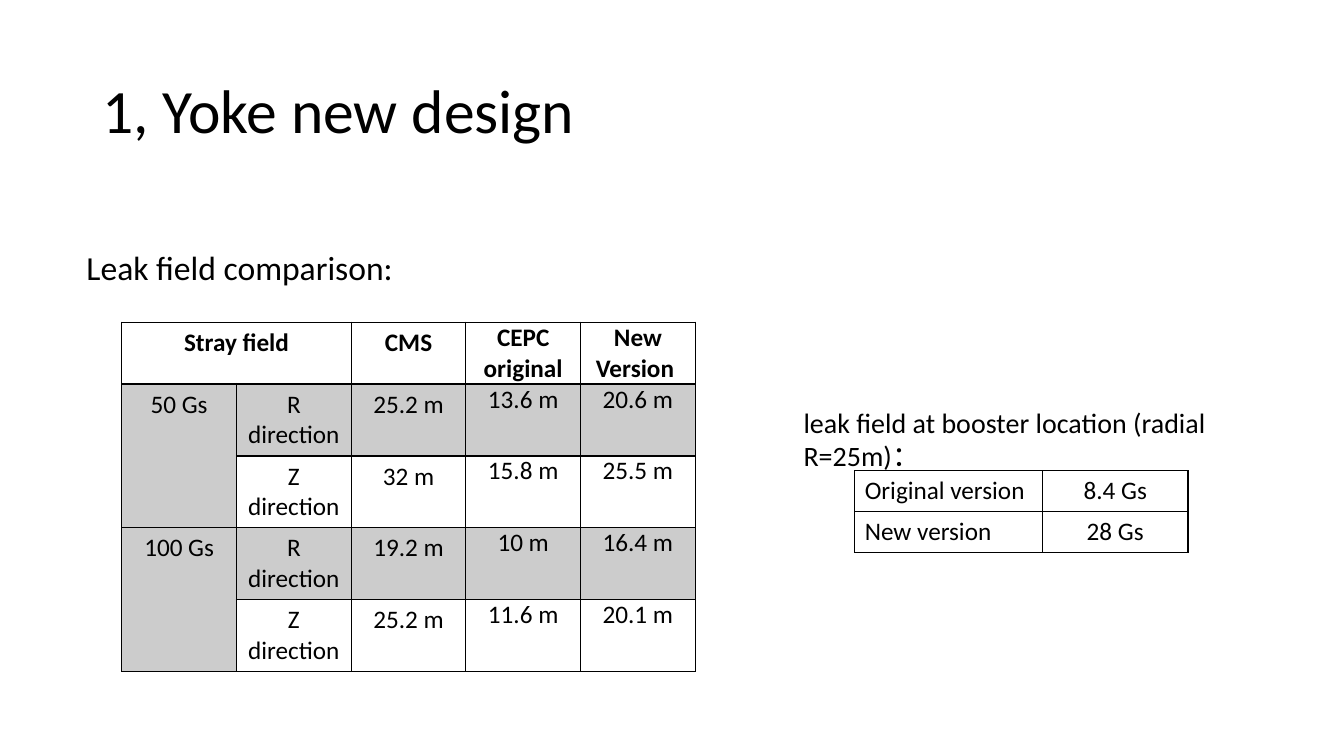
"""Build the yoke design slide with its leak field comparison tables."""
from lxml import etree
from pptx import Presentation
from pptx.dml.color import RGBColor
from pptx.enum.text import MSO_ANCHOR, PP_ALIGN
from pptx.oxml.ns import qn
from pptx.util import Cm, Pt

LEFT, CENTER = PP_ALIGN.LEFT, PP_ALIGN.CENTER
TOP, MIDDLE = MSO_ANCHOR.TOP, MSO_ANCHOR.MIDDLE
BLACK = RGBColor(0, 0, 0)
GREY = RGBColor(0xCC, 0xCC, 0xCC)
FONT = "Calibri"

TITLE = "1, Yoke new design"
COMPARISON_LABEL = "Leak field comparison:"
BOOSTER_LABEL = "leak field at booster location (radial R=25m)："

STRAY_FIELD = [
    ["Stray field", "", "CMS", "CEPC original", "New Version "],
    ["50 Gs", "R direction", "25.2 m", "13.6 m", "20.6 m"],
    ["", "Z direction", "32 m", "15.8 m", "25.5 m"],
    ["100 Gs", "R direction", "19.2 m", "10 m", "16.4 m"],
    ["", "Z direction", "25.2 m", "11.6 m", "20.1 m"],
]
STRAY_MERGES = [((0, 0), (0, 1)), ((1, 0), (2, 0)), ((3, 0), (4, 0))]
FIRST_TIGHT_COLUMN = 3
BOOSTER_FIELD = [["Original version", "8.4 Gs"], ["New version", "28 Gs"]]


def write(frame, text, size, bold=False, align=LEFT, spacing=None):
    para = frame.paragraphs[0]
    para.alignment = align
    para.line_spacing = spacing
    span = para.add_run()
    span.text = text
    span.font.name = FONT
    span.font.size = Pt(size)
    span.font.bold = bold
    span.font.color.rgb = BLACK


def add_label(slide, text, left, top, width, height, size,
              anchor=TOP, spacing=None, right_margin=0.25):
    box = slide.shapes.add_textbox(Cm(left), Cm(top), Cm(width), Cm(height))
    frame = box.text_frame
    frame.word_wrap = True
    frame.vertical_anchor = anchor
    frame.margin_right = Cm(right_margin)
    write(frame, text, size, spacing=spacing)


def add_borders(cell, top=1, bottom=1):
    properties = cell._tc.get_or_add_tcPr()
    for side, width in (("L", 1), ("R", 1), ("T", top), ("B", bottom)):
        line = etree.SubElement(properties, qn(f"a:ln{side}"), w=str(Pt(width)))
        fill = etree.SubElement(line, qn("a:solidFill"))
        etree.SubElement(fill, qn("a:srgbClr"), val=str(BLACK))


def add_grid(slide, rows, left, top, widths, heights):
    table = slide.shapes.add_table(
        len(rows), len(widths), Cm(left), Cm(top),
        Cm(sum(widths)), Cm(sum(heights))).table
    table.first_row = table.horz_banding = False
    for column, width in zip(table.columns, widths):
        column.width = Cm(width)
    for row, height in zip(table.rows, heights):
        row.height = Cm(height)
    return table


def add_stray_table(slide):
    table = add_grid(slide, STRAY_FIELD, 3.07, 8.12, [2.89] * 5, [1.56] + [1.81] * 4)
    for start, end in STRAY_MERGES:
        table.cell(*start).merge(table.cell(*end))
    for r, row in enumerate(STRAY_FIELD):
        for c, text in enumerate(row):
            cell = table.cell(r, c)
            add_borders(cell, top=2 if r == 1 else 1, bottom=2 if r == 0 else 1)
            if r % 2 or (r and c == 0):
                cell.fill.solid()
                cell.fill.fore_color.rgb = GREY
            else:
                cell.fill.background()
            if c >= FIRST_TIGHT_COLUMN:
                cell.margin_left = cell.margin_right = 0
                cell.margin_top = cell.margin_bottom = 0
            if text:
                write(cell.text_frame, text, 18, bold=r == 0, align=CENTER)


def add_booster_table(slide):
    table = add_grid(slide, BOOSTER_FIELD, 21.54, 11.86, [4.73, 3.67], [1.03] * 2)
    for r, row in enumerate(BOOSTER_FIELD):
        for c, text in enumerate(row):
            cell = table.cell(r, c)
            add_borders(cell)
            cell.fill.background()
            write(cell.text_frame, text, 18, align=CENTER if c else LEFT)


def main():
    deck = Presentation()
    deck.slide_width, deck.slide_height = Cm(33.87), Cm(19.05)
    slide = deck.slides.add_slide(deck.slide_layouts[6])
    add_label(slide, TITLE, 2.33, 1.01, 29.21, 3.68, 44, anchor=MIDDLE, spacing=0.9)
    add_stray_table(slide)
    add_label(slide, BOOSTER_LABEL, 20, 10.09, 13.87, 1.11, 20, right_margin=2.2)
    add_booster_table(slide)
    add_label(slide, COMPARISON_LABEL, 1.93, 6.1, 8.6, 1.28, 24)
    deck.save("out.pptx")


if __name__ == "__main__":
    main()
